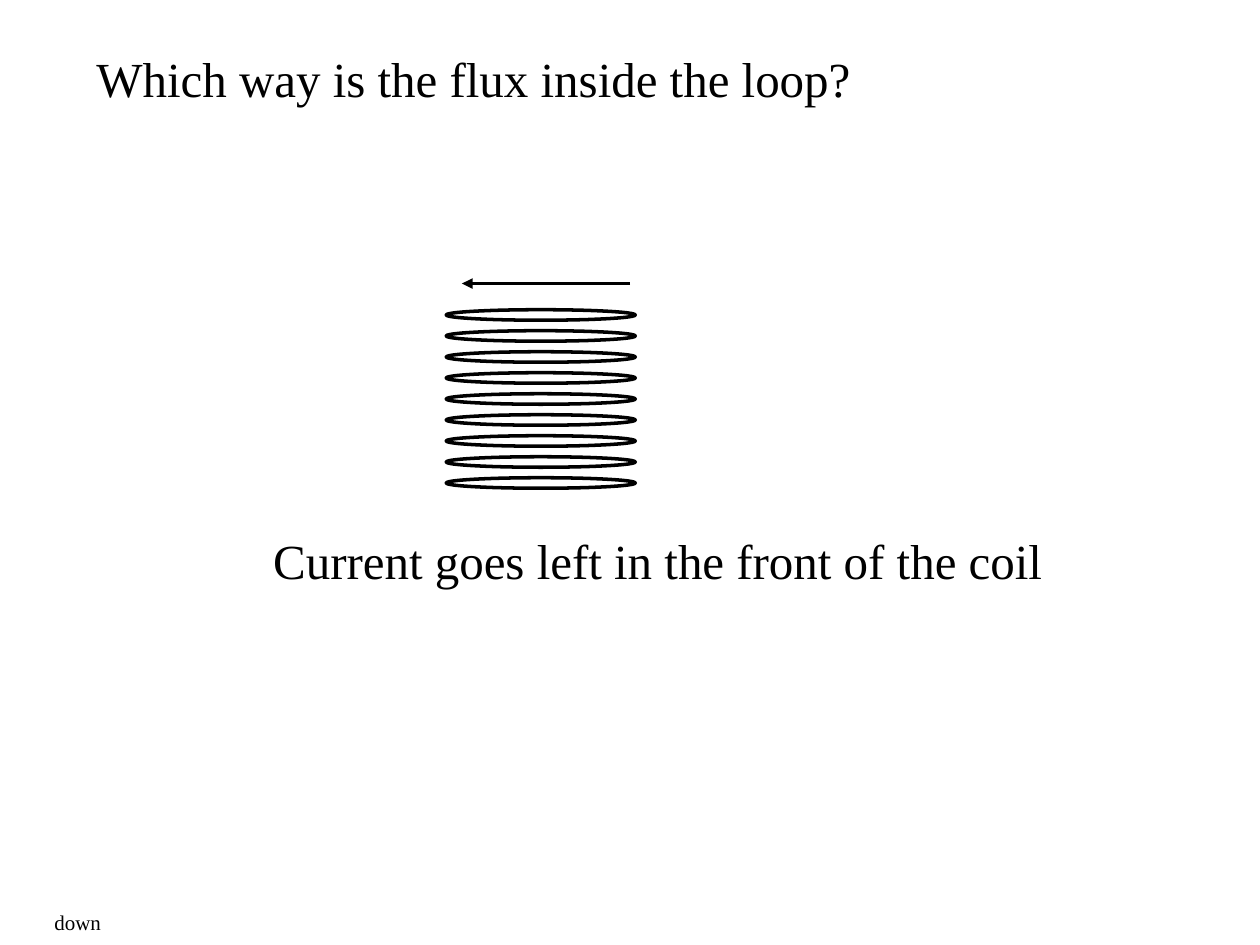
from dataclasses import dataclass

import pptx
import pptx.dml.color
import pptx.enum.shapes
import pptx.enum.text
import pptx.oxml
import pptx.oxml.ns
import pptx.util

CELL = 1 / 12  # grid cell in inches: the slide is 120 columns by 90 rows
COLORS = {"ink": "000000"}
FONT = "Times New Roman"
LINE_WIDTH = 2
TURNS = 9


@dataclass
class Label:
    text: str
    col: float
    row: float
    cols: float
    rows: float
    size: int


LABELS = [
    Label("down", 4, 86, 6.84, 3.6, 12),
    Label("Current goes left in the front of the coil", 24.84, 49.9, 75.7, 6.84, 28),
    Label("Which way is the flux inside the loop?", 8, 4, 74.3, 6.84, 28),
]


def cells(count: float) -> pptx.util.Length:
    return pptx.util.Inches(count * CELL)


def ink() -> pptx.dml.color.RGBColor:
    return pptx.dml.color.RGBColor.from_string(COLORS["ink"])


def style_line(line) -> None:
    line.color.rgb = ink()
    line.width = pptx.util.Pt(LINE_WIDTH)


def add_label(slide, label: Label) -> None:
    box = slide.shapes.add_textbox(
        cells(label.col), cells(label.row), cells(label.cols), cells(label.rows))
    tf = box.text_frame
    tf.word_wrap = False
    tf.auto_size = pptx.enum.text.MSO_AUTO_SIZE.SHAPE_TO_FIT_TEXT
    p = tf.paragraphs[0]
    p.text = label.text
    p.font.name = FONT
    p.font.size = pptx.util.Pt(label.size)
    p.font.color.rgb = ink()


def add_coil(slide, col: float, row: float, turns: int) -> None:
    """Stack upright ellipses, each turned on its side, two rows apart."""
    group = slide.shapes.add_group_shape()
    for turn in range(turns):
        sp = group.shapes.add_shape(
            pptx.enum.shapes.MSO_SHAPE.OVAL,
            cells(col), cells(row + 2 * turn), cells(1), cells(18))
        sp.rotation = 90
        sp.shadow.inherit = False
        sp.fill.background()
        style_line(sp.line)


def add_arrow(slide, start_col: float, end_col: float, row: float) -> None:
    arrow = slide.shapes.add_connector(
        pptx.enum.shapes.MSO_CONNECTOR.STRAIGHT,
        cells(start_col), cells(row), cells(end_col), cells(row))
    style_line(arrow.line)
    head = pptx.oxml.parse_xml(
        f'<a:tailEnd {pptx.oxml.ns.nsdecls("a")} type="triangle"/>')
    arrow.line._get_or_add_ln().append(head)
    arrow._element.spPr.append(
        pptx.oxml.parse_xml(f'<a:effectLst {pptx.oxml.ns.nsdecls("a")}/>'))


def main() -> None:
    prs = pptx.Presentation()
    prs.slide_width, prs.slide_height = cells(120), cells(90)
    slide = prs.slides.add_slide(prs.slide_layouts[6])
    answer, caption, question = LABELS
    add_label(slide, answer)
    add_coil(slide, 51, 21, TURNS)
    add_label(slide, caption)
    add_arrow(slide, 60, 44, 27)
    add_label(slide, question)
    prs.save("out.pptx")


if __name__ == "__main__":
    main()
